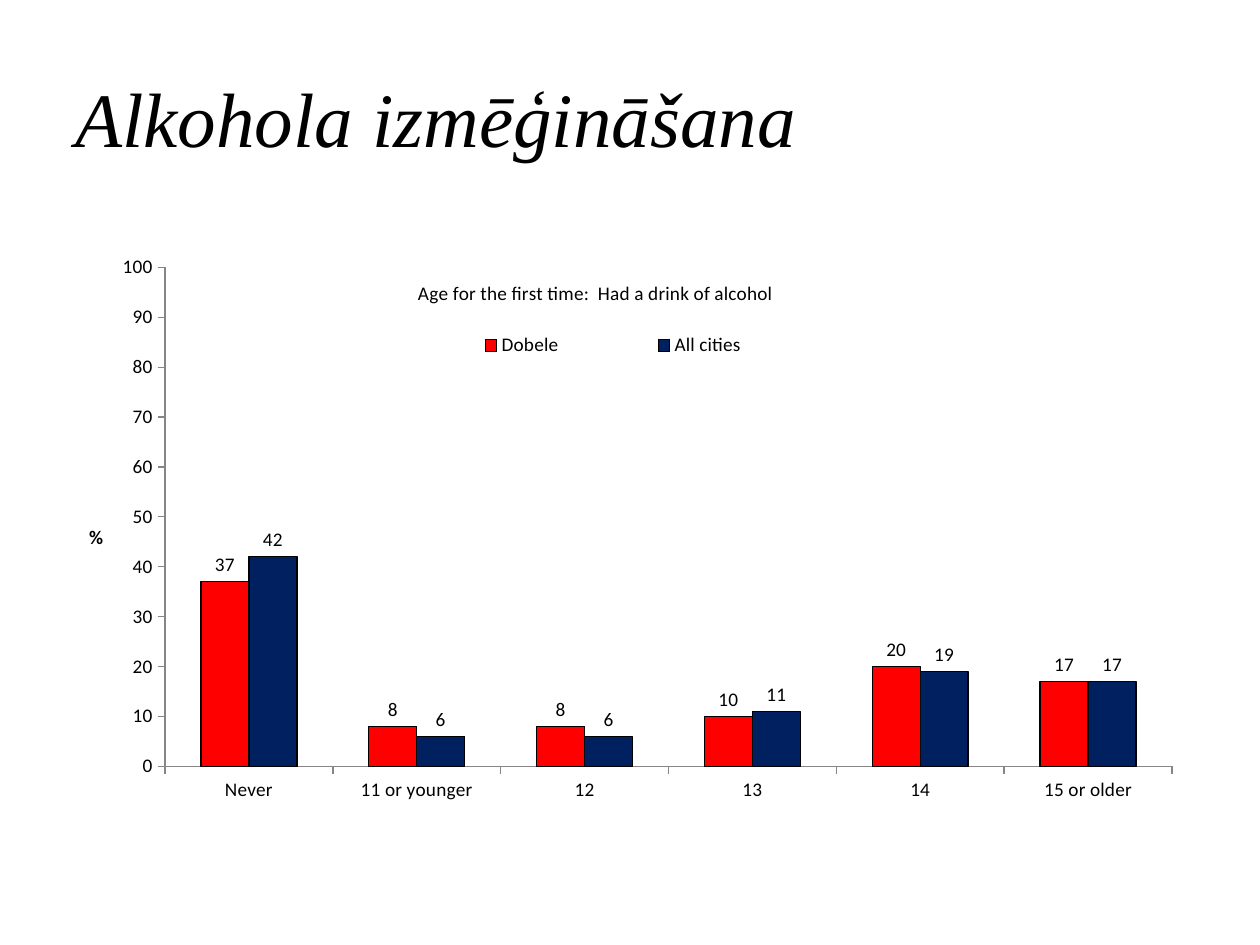
from dataclasses import dataclass

from pptx import Presentation
from pptx.chart.data import CategoryChartData
from pptx.dml.color import RGBColor
from pptx.enum.chart import XL_CHART_TYPE, XL_LABEL_POSITION, XL_LEGEND_POSITION, XL_TICK_MARK
from pptx.enum.text import MSO_ANCHOR
from pptx.oxml import parse_xml
from pptx.oxml.ns import nsdecls, qn
from pptx.util import Cm, Pt

CLUSTERED = XL_CHART_TYPE.COLUMN_CLUSTERED
OUTSIDE_END = XL_LABEL_POSITION.OUTSIDE_END
RIGHT = XL_LEGEND_POSITION.RIGHT
TICK_OUT = XL_TICK_MARK.OUTSIDE
MIDDLE = MSO_ANCHOR.MIDDLE


@dataclass
class Theme:
    black: RGBColor = RGBColor(0, 0, 0)
    gray: RGBColor = RGBColor(0x86, 0x86, 0x86)
    red: RGBColor = RGBColor(0xFF, 0, 0)
    navy: RGBColor = RGBColor(0, 0x20, 0x60)
    title_font: str = "Times New Roman"
    chart_font: str = "Calibri"
    title_size: Pt = Pt(44)
    chart_size: Pt = Pt(11)
    line: Pt = Pt(0.75)


def set_font(font, name, size):
    font.name = name
    font.size = size
    font.bold = False
    font.color.rgb = theme.black


def set_layout(parent, index, target="", **fractions):
    for old in parent.findall(qn("c:layout")):
        parent.remove(old)
    inner = f'<c:layoutTarget val="{target}"/>' if target else ""
    inner += "".join(f'<c:{key}Mode val="edge"/>' for key in "xy")
    inner += "".join(f'<c:{key} val="{value}"/>' for key, value in fractions.items())
    xml = f"<c:layout {nsdecls('c')}><c:manualLayout>{inner}</c:manualLayout></c:layout>"
    parent.insert(index, parse_xml(xml))


theme = Theme()
deck = Presentation()
deck.slide_width = Cm(25.4)
deck.slide_height = Cm(19.05)
slide = deck.slides.add_slide(deck.slide_layouts[6])

title_box = slide.shapes.add_textbox(Cm(1.27), Cm(0.76), Cm(22.86), Cm(3.18))
title_frame = title_box.text_frame
title_frame.word_wrap = True
title_frame.vertical_anchor = MIDDLE
paragraph = title_frame.paragraphs[0]
paragraph.text = "Alkohola izmēģināšana"
set_font(paragraph.font, theme.title_font, theme.title_size)
paragraph.font.italic = True

data = CategoryChartData(number_format="#,##0")
data.categories = ["Never", "11 or younger", "12", "13", "14", "15 or older"]
data.add_series("Dobele", [37, 8, 8, 10, 20, 17])
data.add_series("All cities", [42, 6, 6, 11, 19, 17])
chart = slide.shapes.add_chart(CLUSTERED, Cm(1.27), Cm(4.45), Cm(22.86), Cm(12.57), data).chart
set_font(chart.font, theme.chart_font, theme.chart_size)

plot = chart.plots[0]
plot.gap_width = 150
plot.overlap = 0
plot.vary_by_categories = False
for series, color in zip(plot.series, [theme.red, theme.navy]):
    series.invert_if_negative = False
    series.format.fill.solid()
    series.format.fill.fore_color.rgb = color
    series.format.line.color.rgb = theme.black
    series.format.line.width = theme.line
    labels = series.data_labels
    labels.show_value = True
    labels.position = OUTSIDE_END
    labels.number_format = "#,##0"
    labels.number_format_is_linked = False

value_axis = chart.value_axis
value_axis.minimum_scale = 0
value_axis.maximum_scale = 100
value_axis.major_unit = 10
value_axis.has_major_gridlines = False
value_axis.tick_labels.number_format = "General"
value_axis.tick_labels.number_format_is_linked = False
for axis in (chart.category_axis, value_axis):
    axis.major_tick_mark = TICK_OUT
    axis.format.line.color.rgb = theme.gray
    axis.format.line.width = theme.line

chart.has_title = True
for title, wording in (
    (chart.chart_title, "Age for the first time:  Had a drink of alcohol"),
    (value_axis.axis_title, "%"),
):
    paragraph = title.text_frame.paragraphs[0]
    paragraph.text = wording
    set_font(paragraph.font, theme.chart_font, theme.chart_size)
paragraph.font.bold = True

chart.has_legend = True
chart.legend.position = RIGHT
chart.legend.include_in_layout = False
set_font(chart.legend.font, theme.chart_font, theme.chart_size)

chart_node = chart.element.find(qn("c:chart"))
plot_area = chart_node.find(qn("c:plotArea"))
axis_title = plot_area.find(qn("c:valAx")).find(qn("c:title"))
axis_title_body = next(axis_title.iter(qn("a:bodyPr")))
axis_title_body.set("rot", "0")
axis_title_body.set("vert", "horz")
set_layout(plot_area, 0, "inner", x=0.09, y=0.075, w=0.888, h=0.8)
set_layout(chart_node.find(qn("c:title")), 1, x=0.31, y=0.09)
set_layout(axis_title, 1, x=0.02, y=0.48)
set_layout(chart_node.find(qn("c:legend")), 1, x=0.29, y=0.16, w=0.39, h=0.08)

deck.save("out.pptx")
